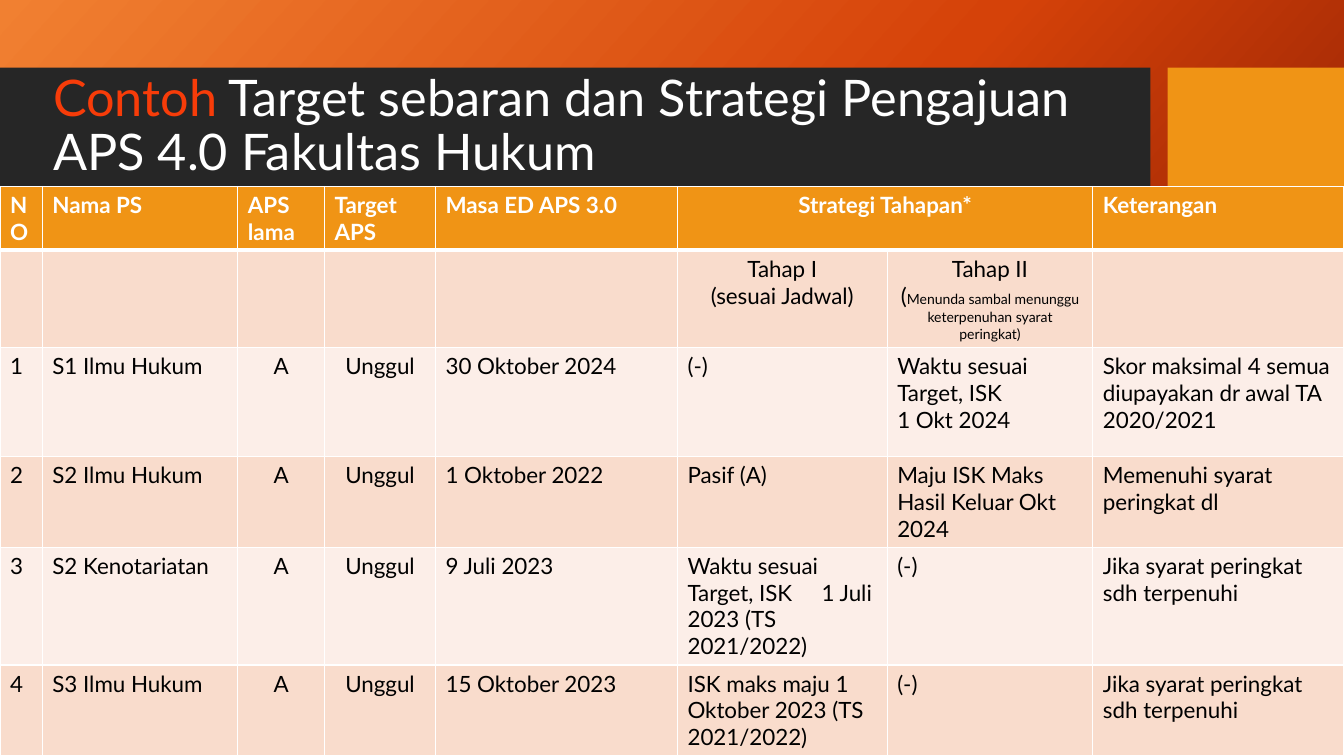
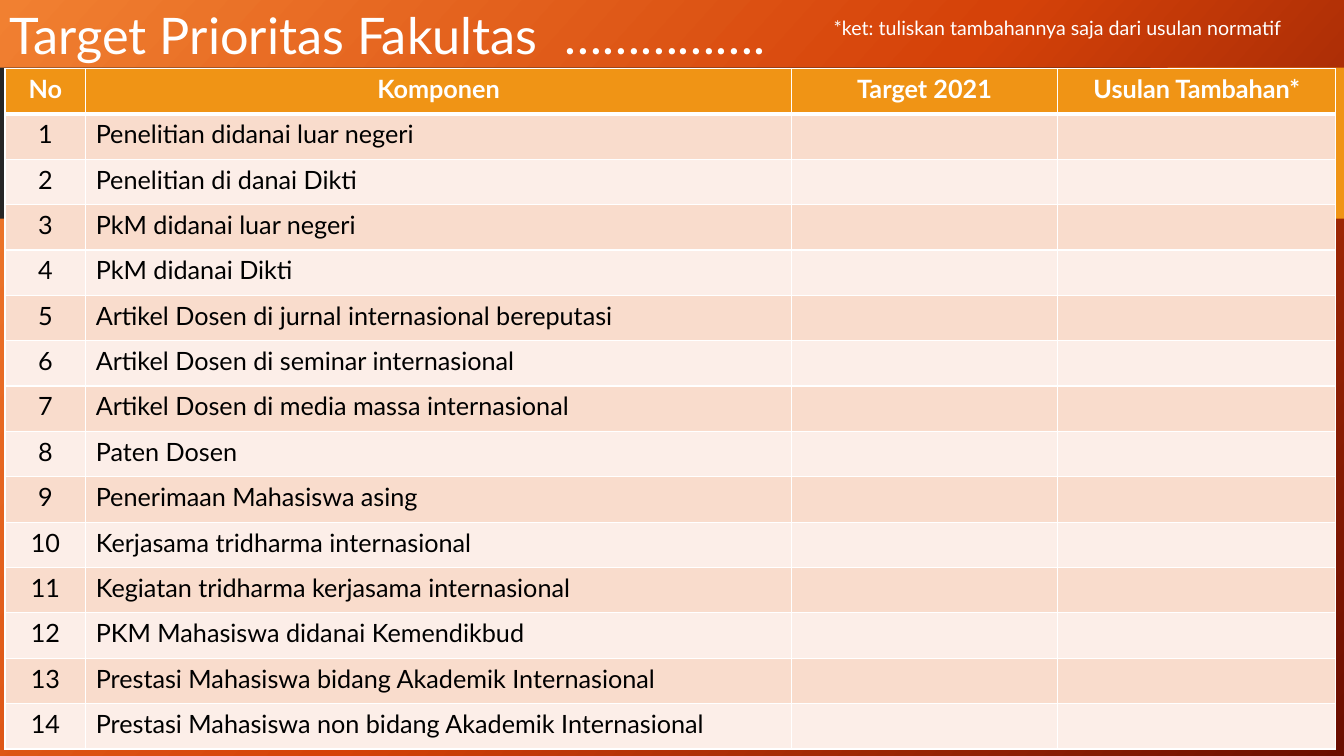
"""Two slides on faculty accreditation strategy and priority targets."""
from copy import deepcopy

from lxml import etree
from pptx import Presentation
from pptx.dml.color import RGBColor
from pptx.enum.shapes import MSO_SHAPE
from pptx.enum.text import MSO_ANCHOR, PP_ALIGN
from pptx.oxml.ns import qn
from pptx.util import Inches, Pt

RECTANGLE = MSO_SHAPE.RECTANGLE
MIDDLE = MSO_ANCHOR.MIDDLE
LEFT, CENTER = PP_ALIGN.LEFT, PP_ALIGN.CENTER

FONT = "Lato"
WHITE, BLACK, CHARCOAL = "FFFFFF", "000000", "262626"
ORANGE, RED = "F09415", "F73C09"
ROW_TINTS = ["FCEEE8", "F9DCCC"]
BACKDROP = [(0, "F18031"), (0.5, "D54209"), (1, "6A0D00")]
BANDS = [(0, 11.41, CHARCOAL), (11.58, 1.75, ORANGE)]
BAND_TOP, BAND_HEIGHT = 0.67, 1.5
TITLE_SIZE = 36

STRATEGY_TITLE = [
    ("Contoh", RED),
    (" Target sebaran dan Strategi Pengajuan APS 4.0 Fakultas Hukum", WHITE),
]
STRATEGY_COLUMNS = [0.42, 1.94, 0.86, 1.1, 2.4, 2.08, 2.04, 2.49]
STRATEGY_HEIGHTS = [0.61, 0.93, 1.08, 0.86, 1.12, 0.86]
STRATEGY_ROWS = [
    ["NO", "Nama PS", "APS lama", "Target APS", "Masa ED APS 3.0",
     "Strategi Tahapan*", "", "Keterangan"],
    ["", "", "", "", "", "Tahap I\n(sesuai Jadwal)", "Tahap II\n(", ""],
    ["1", "S1 Ilmu Hukum", "A", "Unggul", "30 Oktober 2024", "(-)",
     "Waktu sesuai Target, ISK\n1 Okt 2024",
     "Skor maksimal 4 semua diupayakan dr awal TA 2020/2021"],
    ["2", "S2 Ilmu Hukum", "A", "Unggul", "1 Oktober 2022", "Pasif (A)",
     "Maju ISK Maks Hasil Keluar Okt 2024", "Memenuhi syarat peringkat dl"],
    ["3", "S2 Kenotariatan", "A", "Unggul", "9 Juli 2023",
     "Waktu sesuai Target, ISK\t1 Juli 2023 (TS 2021/2022)", "(-)",
     "Jika syarat peringkat sdh terpenuhi"],
    ["4", "S3 Ilmu Hukum", "A", "Unggul", "15 Oktober 2023",
     "ISK maks maju 1 Oktober 2023 (TS 2021/2022)", "(-)",
     "Jika syarat peringkat sdh terpenuhi"],
]
DELAY_NOTE = "Menunda sambal menunggu keterpenuhan syarat peringkat)"

PRIORITY_TITLE = [("Target Prioritas Fakultas\t…………….", WHITE)]
PRIORITY_NOTE = "*ket: tuliskan tambahannya saja dari usulan normatif"
PRIORITY_COLUMNS = [0.8, 7, 2.64, 2.76]
PRIORITY_HEADER = ["No", "Komponen", "Target 2021", "Usulan Tambahan*"]
COMPONENTS = [
    "Penelitian didanai luar negeri",
    "Penelitian di danai Dikti",
    "PkM didanai luar negeri",
    "PkM didanai Dikti",
    "Artikel Dosen di jurnal internasional bereputasi",
    "Artikel Dosen di seminar internasional",
    "Artikel Dosen di media massa internasional",
    "Paten Dosen",
    "Penerimaan Mahasiswa asing",
    "Kerjasama tridharma internasional",
    "Kegiatan tridharma kerjasama internasional",
    "PKM Mahasiswa didanai Kemendikbud",
    "Prestasi Mahasiswa bidang Akademik Internasional",
    "Prestasi Mahasiswa non bidang Akademik Internasional",
]


def rgb(color):
    return RGBColor.from_string(color)


def style_run(run, size, color, bold=False):
    run.font.name = FONT
    run.font.size = Pt(size)
    run.font.bold = bold
    run.font.color.rgb = rgb(color)


def set_tab(paragraph, position):
    tabs = etree.SubElement(paragraph._p.get_or_add_pPr(), qn("a:tabLst"))
    etree.SubElement(tabs, qn("a:tab"), pos=str(Inches(position)), algn="l")


def add_text(slide, box, pieces, size):
    frame = slide.shapes.add_textbox(*map(Inches, box)).text_frame
    frame.word_wrap = True
    for text, color in pieces:
        run = frame.paragraphs[0].add_run()
        run.text = text
        style_run(run, size, color)
    return frame


def add_title(slide, box, pieces):
    frame = add_text(slide, box, pieces, TITLE_SIZE)
    frame.vertical_anchor = MIDDLE
    frame.paragraphs[0].line_spacing = 0.9
    return frame.paragraphs[0]


def new_slide(prs):
    slide = prs.slides.add_slide(prs.slide_layouts[6])
    fill = slide.background.fill
    fill.gradient()
    fill.gradient_angle = 318
    stops = slide._element.find(".//" + qn("a:gsLst"))
    stops.append(deepcopy(stops[-1]))
    for stop, (position, color) in zip(fill.gradient_stops, BACKDROP):
        stop.position = position
        stop.color.rgb = rgb(color)
    for left, width, color in BANDS:
        band = slide.shapes.add_shape(
            RECTANGLE, *map(Inches, (left, BAND_TOP, width, BAND_HEIGHT)))
        band.shadow.inherit = False
        band.fill.solid()
        band.fill.fore_color.rgb = rgb(color)
        band.line.fill.background()
    return slide


def set_borders(cell, top, bottom):
    for side, points in (("L", 1), ("R", 1), ("T", top), ("B", bottom)):
        line = etree.SubElement(cell._tc.get_or_add_tcPr(),
                                qn("a:ln" + side), w=str(Pt(points)))
        solid = etree.SubElement(line, qn("a:solidFill"))
        etree.SubElement(solid, qn("a:srgbClr"), val=WHITE)


def add_grid(slide, left, top, columns, heights, rows, size, is_centered):
    box = map(Inches, (left, top, sum(columns), sum(heights)))
    table = slide.shapes.add_table(len(rows), len(columns), *box).table
    table.horz_banding = False
    for column, width in zip(table.columns, columns):
        column.width = Inches(width)
    for r, (row, height) in enumerate(zip(rows, heights)):
        table.rows[r].height = Inches(height)
        header = r == 0
        for c, text in enumerate(row):
            cell = table.cell(r, c)
            set_borders(cell, 3 if r == 1 else 1, 3 if header else 1)
            cell.fill.solid()
            cell.fill.fore_color.rgb = rgb(ORANGE if header else ROW_TINTS[r % 2])
            cell.text_frame.text = text
            for paragraph in cell.text_frame.paragraphs:
                paragraph.alignment = CENTER if is_centered(r, c) else LEFT
                if "\t" in text:
                    set_tab(paragraph, 1.33)
                for run in paragraph.runs:
                    style_run(run, size, WHITE if header else BLACK, header)
    return table


def build_strategy(prs):
    slide = new_slide(prs)
    add_title(slide, (0.43, 0.67, 10.51, 1.18), STRATEGY_TITLE)
    table = add_grid(
        slide, 0, 1.85, STRATEGY_COLUMNS, STRATEGY_HEIGHTS, STRATEGY_ROWS, 16,
        lambda r, c: r == 1 or (c == 5 if r == 0 else c in (2, 3)))
    table.cell(0, 5).merge(table.cell(0, 6))
    note = table.cell(1, 6).text_frame.paragraphs[1].add_run()
    note.text = DELAY_NOTE
    style_run(note, 10, BLACK)


def build_priorities(prs):
    slide = new_slide(prs)
    set_tab(add_title(slide, (0, -0.09, 10.51, 0.93), PRIORITY_TITLE), 5.5)
    rows = [PRIORITY_HEADER]
    rows += [[str(n), name, "", ""] for n, name in enumerate(COMPONENTS, 1)]
    add_grid(slide, 0.05, 0.68, PRIORITY_COLUMNS, [0.45] * len(rows), rows, 18,
             lambda r, c: r == 0 or c == 0)
    add_text(slide, (8.17, 0.11, 4.93, 0.34), [(PRIORITY_NOTE, WHITE)], 14)


def main():
    prs = Presentation()
    prs.slide_width, prs.slide_height = Inches(13.33), Inches(7.5)
    build_strategy(prs)
    build_priorities(prs)
    prs.save("out.pptx")


if __name__ == "__main__":
    main()
